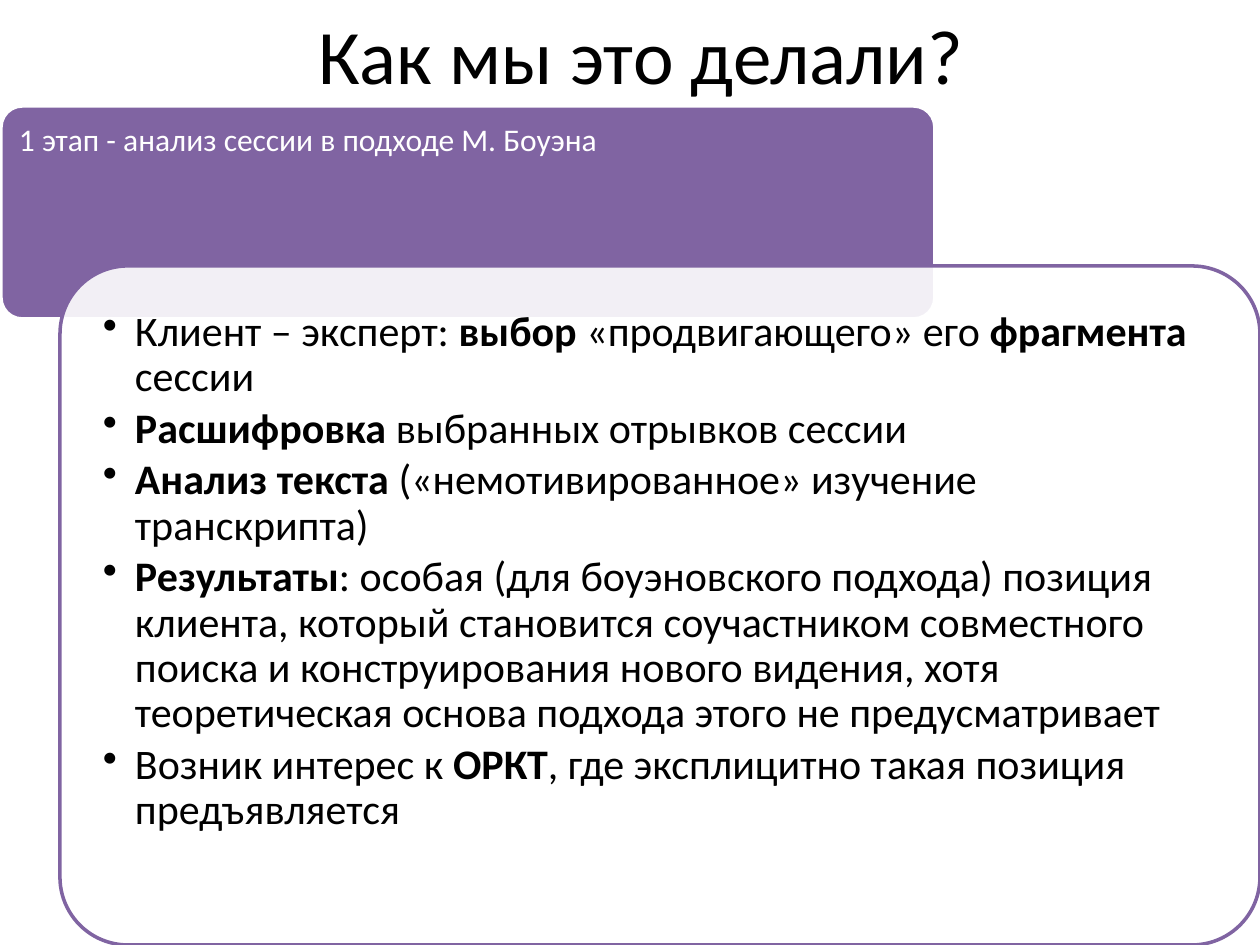
import pptx
import pptx.util
import pptx.dml.color
import pptx.enum.shapes
import pptx.enum.text
import pptx.oxml.ns
from lxml import etree

# Content: text between asterisks is bold
TITLE = "Как мы это делали?"
STAGE = "1 этап - анализ сессии в подходе М. Боуэна"
STEPS = [
    "Клиент – эксперт: *выбор* «продвигающего» его *фрагмента* сессии",
    "*Расшифровка* выбранных отрывков сессии",
    "*Анализ текста* («немотивированное» изучение транскрипта)",
    "*Результаты*: особая (для боуэновского подхода) позиция клиента, "
    "который становится соучастником совместного поиска и конструирования "
    "нового видения, хотя теоретическая основа подхода этого не предусматривает",
    "Возник интерес к *ОРКТ*, где эксплицитно такая позиция предъявляется",
]

COLORS = {"purple": "8064A2", "white": "FFFFFF", "black": "000000"}
FONT = "Calibri"
EMU_PER_PX = 914400 / 126
INDENT = 32

ALIGN = pptx.enum.text.PP_ALIGN
ANCHOR = pptx.enum.text.MSO_ANCHOR


def px(length):
    return pptx.util.Emu(round(length * EMU_PER_PX))


def color(name):
    return pptx.dml.color.RGBColor.from_string(COLORS[name])


def add_panel(slide, box, fill, line, opacity=100):
    kind = pptx.enum.shapes.MSO_SHAPE.ROUNDED_RECTANGLE
    shape = slide.shapes.add_shape(kind, *map(px, box))
    shape.adjustments[0] = 0.1
    shape.shadow.inherit = False
    shape.fill.solid()
    shape.fill.fore_color.rgb = color(fill)
    shape.line.color.rgb = color(line)
    shape.line.width = pptx.util.Pt(2)
    if opacity < 100:
        solid = shape.fill._xPr.find(pptx.oxml.ns.qn("a:solidFill"))
        etree.SubElement(solid[0], pptx.oxml.ns.qn("a:alpha"), val=str(opacity * 1000))


def add_bullet(paragraph):
    properties = paragraph._p.get_or_add_pPr()
    properties.set("marL", str(px(INDENT)))
    properties.set("indent", str(-px(INDENT)))
    etree.SubElement(properties, pptx.oxml.ns.qn("a:buChar"), char="•")


def add_text(slide, box, lines, size, ink, insets, frame_format, paragraph_format, bullets=False):
    frame = slide.shapes.add_textbox(*map(px, box)).text_frame
    sides = ("margin_left", "margin_top", "margin_right", "margin_bottom")
    margins = dict(zip(sides, map(px, insets)))
    for name, value in {"word_wrap": True, **margins, **frame_format}.items():
        setattr(frame, name, value)
    for number, line in enumerate(lines):
        paragraph = frame.add_paragraph() if number else frame.paragraphs[0]
        for name, value in paragraph_format.items():
            setattr(paragraph, name, value)
        if bullets:
            add_bullet(paragraph)
        for position, part in enumerate(line.split("*")):
            if not part:
                continue
            run = paragraph.add_run()
            run.text = part
            run.font.color.rgb = color(ink)
            font_format = {"name": FONT, "size": pptx.util.Pt(size), "bold": position % 2 == 1}
            for name, value in font_format.items():
                setattr(run.font, name, value)


def main():
    presentation = pptx.Presentation()
    presentation.slide_width, presentation.slide_height = px(1260), px(945)
    slide = presentation.slides.add_slide(presentation.slide_layouts[6])

    # Title
    add_text(slide, (74, 0, 1134, 107), [TITLE], 44, "black", (13, 6, 13, 6),
             {"vertical_anchor": ANCHOR.MIDDLE}, {"alignment": ALIGN.CENTER})

    # Stage heading
    add_panel(slide, (1, 106, 934, 213), "purple", "white")
    add_text(slide, (1, 106, 934, 142), [STAGE], 18, "white", (18, 18, 18, 9),
             {"vertical_anchor": ANCHOR.TOP},
             {"line_spacing": 0.9, "space_after": pptx.util.Pt(6.3)})

    # Steps of the stage
    add_panel(slide, (60, 266, 1200, 679), "white", "purple", opacity=90)
    add_text(slide, (79, 286, 1160, 639), STEPS, 24, "black", (24, 24, 24, 24),
             {"vertical_anchor": ANCHOR.TOP},
             {"line_spacing": 0.9, "space_after": pptx.util.Pt(3.6)}, bullets=True)

    presentation.save("out.pptx")


if __name__ == "__main__":
    main()
